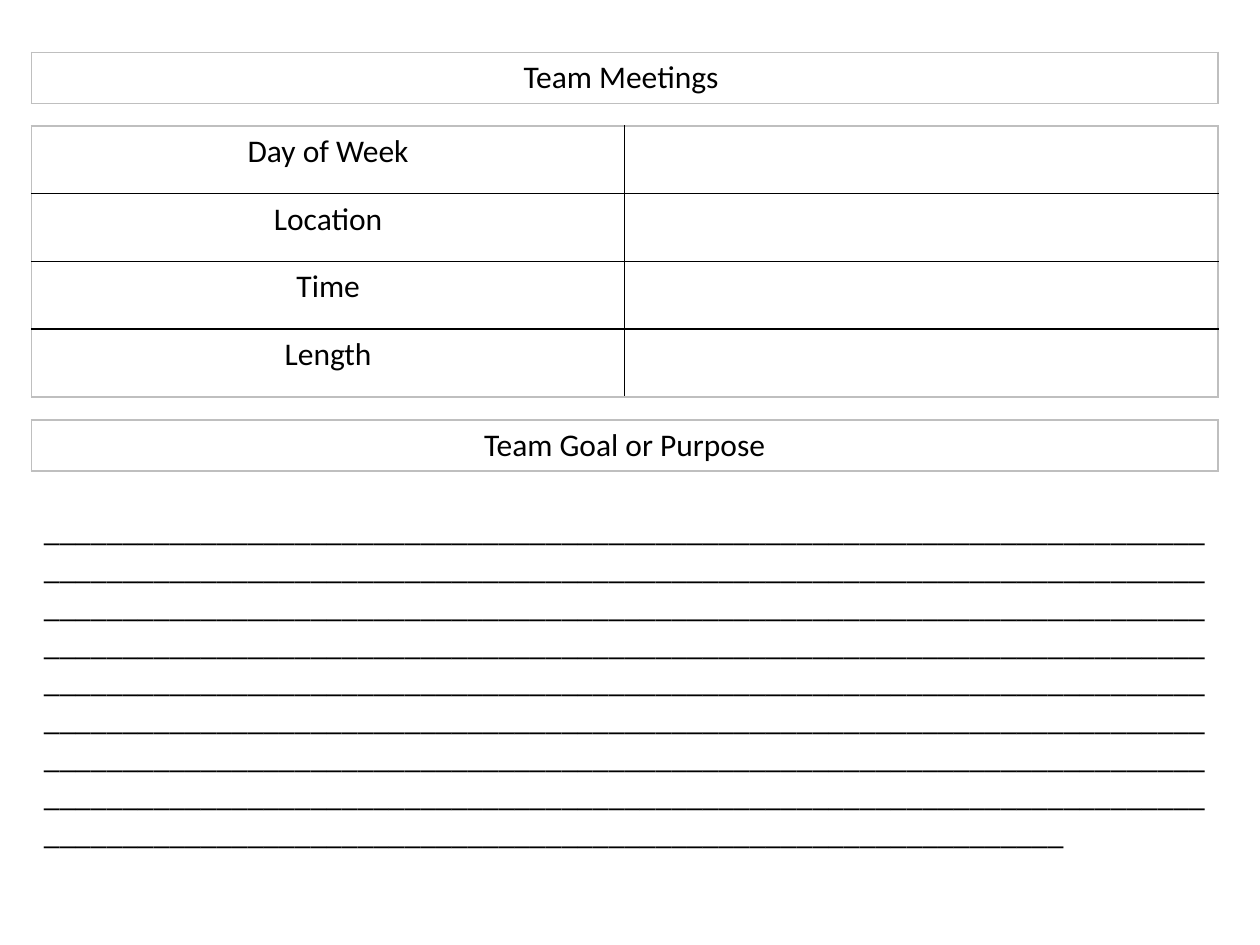
from lxml import etree
from pptx import Presentation
from pptx.dml.color import RGBColor
from pptx.enum.text import MSO_AUTO_SIZE, PP_ALIGN
from pptx.oxml.ns import qn
from pptx.util import Pt

COLORS = {"text": "000000", "inner": "000000", "outer": "BFBFBF"}
FONT = "Calibri"
LEFT, WIDTH = 18, 678
RULE_CHARACTERS = 657


def add_span(para, text):
    span = para.add_run()
    span.text = text
    span.font.name = FONT
    span.font.size = Pt(18)
    span.font.color.rgb = RGBColor.from_string(COLORS["text"])


def set_borders(cell, sides):
    """Draw the cell edges; sides maps L, R, T and B to a colour name."""
    properties = cell._tc.get_or_add_tcPr()
    for position, side in enumerate("LRTB"):
        line = etree.Element(qn(f"a:ln{side}"), w=str(Pt(1)))
        fill = etree.SubElement(line, qn("a:solidFill"))
        etree.SubElement(fill, qn("a:srgbClr"), val=COLORS[sides[side]])
        properties.insert(position, line)


def add_form_table(page, labels, columns, left, top, width, height):
    """Place a bordered table with a centred label at the start of each row."""
    rows = len(labels)
    table = page.shapes.add_table(
        rows, columns, Pt(left), Pt(top), Pt(width), Pt(height)).table
    table.first_row = table.horz_banding = False
    for row, label in enumerate(labels):
        for column in range(columns):
            cell = table.cell(row, column)
            cell.fill.background()
            outside = {"L": column == 0, "R": column == columns - 1,
                       "T": row == 0, "B": row == rows - 1}
            set_borders(cell, {side: "outer" if edge else "inner"
                               for side, edge in outside.items()})
        para = table.cell(row, 0).text_frame.paragraphs[0]
        para.alignment = PP_ALIGN.CENTER
        add_span(para, label)


def add_writing_lines(page, left, top, width, height):
    box = page.shapes.add_textbox(Pt(left), Pt(top), Pt(width), Pt(height))
    frame = box.text_frame
    frame.word_wrap = True
    frame.auto_size = MSO_AUTO_SIZE.SHAPE_TO_FIT_TEXT
    add_span(frame.paragraphs[0], "_" * RULE_CHARACTERS)


def main():
    deck = Presentation()
    deck.slide_width, deck.slide_height = Pt(720), Pt(540)
    page = deck.slides.add_slide(deck.slide_layouts[6])
    add_form_table(page, ["Team Meetings "], 1, LEFT, 30, WIDTH, 29.2)
    add_form_table(page, ["Day of Week", "Location", "Time", "Length"], 2,
                   LEFT, 72, WIDTH, 154.8)
    add_form_table(page, ["Team Goal or Purpose"], 1, LEFT, 240, WIDTH, 29.2)
    add_writing_lines(page, LEFT, 288, WIDTH, 204)
    deck.save("out.pptx")


if __name__ == "__main__":
    main()
